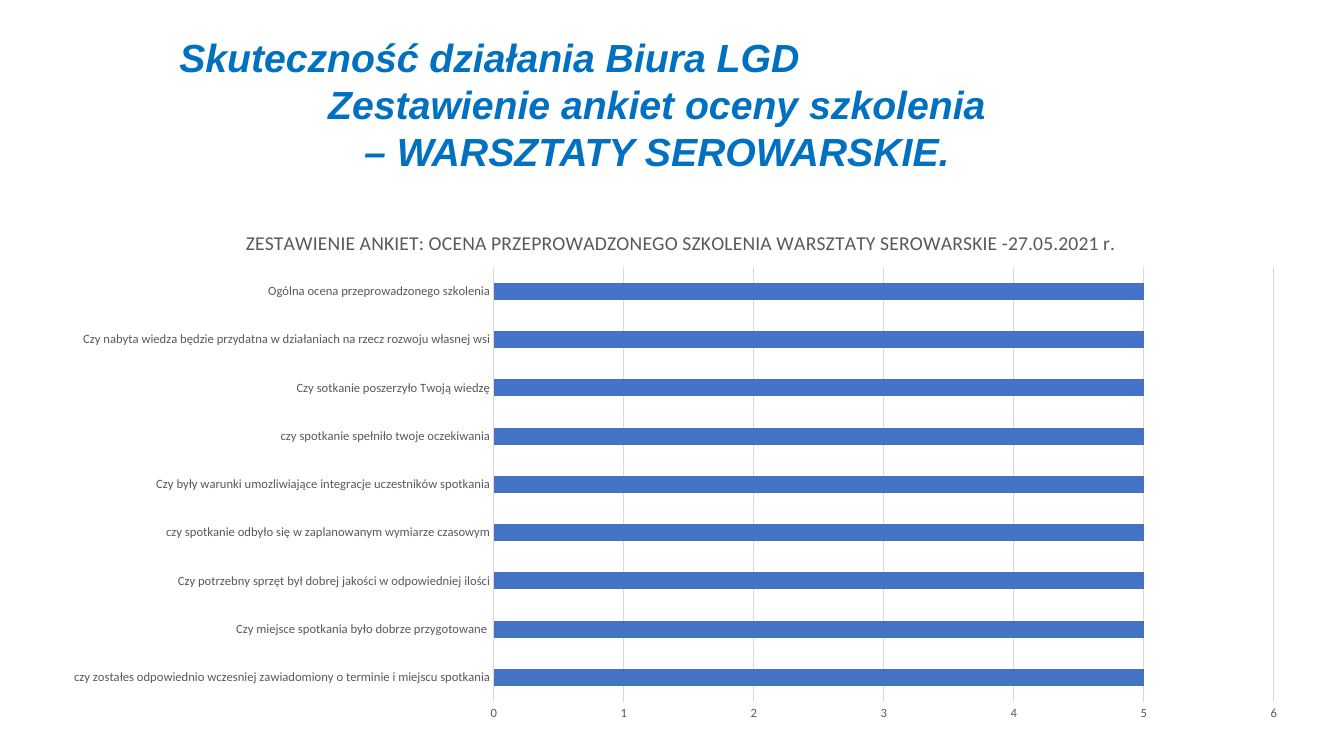
from lxml import etree
from pptx import Presentation
from pptx.chart.data import CategoryChartData
from pptx.dml.color import RGBColor
from pptx.enum.chart import XL_CHART_TYPE as ChartType, XL_TICK_MARK as TickMark
from pptx.enum.text import PP_ALIGN as Align
from pptx.oxml.ns import qn
from pptx.util import Inches, Pt

# Content: heading lines with alignment and left indent in inches
HEADING = [
    ("Skuteczność działania Biura LGD", Align.LEFT, 0.88),
    ("Zestawienie ankiet oceny szkolenia", Align.CENTER, 0),
    ("– WARSZTATY SEROWARSKIE.", Align.CENTER, 0),
]
CHART_TITLE = ("ZESTAWIENIE ANKIET: OCENA PRZEPROWADZONEGO SZKOLENIA "
               "WARSZTATY SEROWARSKIE -27.05.2021 r.")
RATINGS = [
    ("czy zostałes odpowiednio wczesniej zawiadomiony o terminie i miejscu spotkania", 5),
    ("Czy miejsce spotkania było dobrze przygotowane ", 5),
    ("Czy potrzebny sprzęt był dobrej jakości w odpowiedniej ilości", 5),
    ("czy spotkanie odbyło się w zaplanowanym wymiarze czasowym", 5),
    ("Czy były warunki umozliwiające integracje uczestników spotkania", 5),
    ("czy spotkanie spełniło twoje oczekiwania", 5),
    ("Czy sotkanie poszerzyło Twoją wiedzę", 5),
    ("Czy nabyta wiedza będzie przydatna w działaniach na rzecz rozwoju własnej wsi", 5),
    ("Ogólna ocena przeprowadzonego szkolenia", 5),
]
BLUE, BAR, GRAY, GRID = "0070C0", "4472C4", "595959", "D9D9D9"


def color_of(code):
    return RGBColor.from_string(code)


def style_font(font, name, size, color):
    font.name, font.size = name, Pt(size)
    font.color.rgb = color_of(color)


def style_line(line, color):
    line.color.rgb = color_of(color)
    line.width = Pt(0.75)


def place(part, index, **values):
    """Fix a chart part at fractions of the chart's size."""
    for old in part.findall(qn("c:layout")):
        part.remove(old)
    layout = etree.Element(qn("c:layout"))
    part.insert(index, layout)
    manual = etree.SubElement(layout, qn("c:manualLayout"))
    for tag, value in values.items():
        etree.SubElement(manual, qn(f"c:{tag}")).set("val", str(value))


deck = Presentation()
deck.slide_width, deck.slide_height = Inches(13.33), Inches(7.5)
page = deck.slides.add_slide(deck.slide_layouts[6])

# Heading
box = page.shapes.add_textbox(Inches(0.8), Inches(0.28), Inches(11.43), Inches(1.51))
frame = box.text_frame
frame.word_wrap = True
for index, (text, align, indent) in enumerate(HEADING):
    para = frame.paragraphs[0] if index == 0 else frame.add_paragraph()
    para.text, para.alignment = text, align
    para._p.get_or_add_pPr().set("marL", str(Inches(indent)))
    span = para.runs[0]
    style_font(span.font, "Arial", 28, BLUE)
    span.font.bold = span.font.italic = True

# Bar chart
data = CategoryChartData()
data.categories = [question for question, _ in RATINGS]
data.add_series("Series 1", [rating for _, rating in RATINGS])
chart = page.shapes.add_chart(ChartType.BAR_CLUSTERED, Inches(0.53), Inches(2.03),
                              Inches(12.48), Inches(5.19), data).chart
chart.has_legend = False
style_font(chart.font, "Calibri", 10, "000000")
plot = chart.plots[0]
plot.gap_width, plot.vary_by_categories = 182, False
fill = plot.series[0].format.fill
fill.solid()
fill.fore_color.rgb = color_of(BAR)

# Chart title
chart.has_title = True
title = chart.chart_title
title.text_frame.text = CHART_TITLE
title_font = title.text_frame.paragraphs[0].runs[0].font
style_font(title_font, "Calibri", 14, GRAY)
title_font.bold = False
place(title._element, 1, xMode="edge", yMode="edge", x=0.15, y=0.04)

# Axes
for axis in (chart.category_axis, chart.value_axis):
    axis.major_tick_mark = axis.minor_tick_mark = TickMark.NONE
    style_font(axis.tick_labels.font, "Calibri", 9, GRAY)
style_line(chart.category_axis.format.line, GRID)
scale = chart.value_axis
scale.minimum_scale, scale.maximum_scale, scale.major_unit = 0, 6, 1
scale.format.line.fill.background()
scale.has_major_gridlines = True
style_line(scale.major_gridlines.format.line, GRID)

# Plot area
place(chart._chartSpace.chart.plotArea, 0, layoutTarget="inner",
      xMode="edge", yMode="edge", x=0.35, y=0.12, w=0.62, h=0.83)

deck.save("out.pptx")
